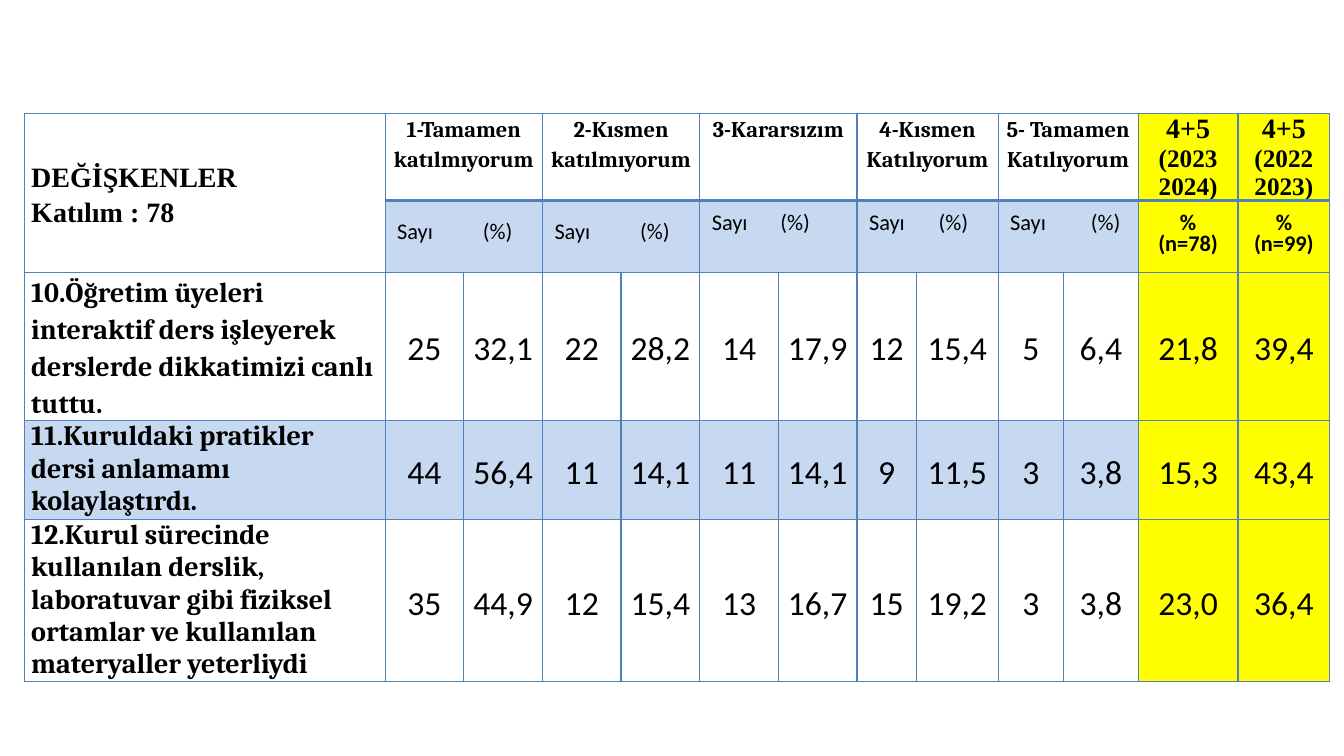
import pptx
import pptx.util
import pptx.dml.color
import pptx.enum.text
import pptx.oxml.ns
import lxml.etree

RGB = pptx.dml.color.RGBColor
ALIGN = pptx.enum.text.PP_ALIGN
ANCHOR = pptx.enum.text.MSO_ANCHOR
BLACK = RGB(0x00, 0x00, 0x00)
BLUE = RGB(0x4F, 0x81, 0xBD)
PALE = RGB(0xC6, 0xD9, 0xF1)
YELLOW = RGB(0xFF, 0xFF, 0x00)
PX = 9144

COLS = [358] + [78] * 6 + [59, 81, 65, 74, 99, 91]
ROWS = [86, 71, 147, 98, 161]
SCALE = ["1-Tamamen katılmıyorum", "2-Kısmen katılmıyorum", "3-Kararsızım",
         "4-Kısmen Katılıyorum", "5- Tamamen Katılıyorum"]
TABS = [(85, 0), (85, 0), (68, 18), (69, 18), (80, 18)]
SUMS = [("(2023 2024)", "(n=78)"), ("(2022 2023)", "(n=99)")]
ITEMS = [
    ("10.Öğretim üyeleri interaktif ders işleyerek derslerde dikkatimizi canlı tuttu.",
     "25 32,1 22 28,2 14 17,9 12 15,4 5 6,4 21,8 39,4", 1.15, None),
    ("11.Kuruldaki pratikler dersi anlamamı kolaylaştırdı.",
     "44 56,4 11 14,1 11 14,1 9 11,5 3 3,8 15,3 43,4", 1.0, PALE),
    ("12.Kurul sürecinde kullanılan derslik, laboratuvar gibi fiziksel ortamlar "
     "ve kullanılan materyaller yeterliydi",
     "35 44,9 12 15,4 13 16,7 15 19,2 3 3,8 23,0 36,4", 1.0, None),
]


def points(size):
    """Give a length in points."""
    return pptx.util.Pt(size)


def style(name, size, bold=True):
    """Give the format values of a font."""
    return {"name": name, "size": points(size), "bold": bold}


TITLE = style("Times New Roman", 20)
YEAR = style("Times New Roman", 18)
HEAD = style("Cambria", 16)
ITEM = style("Cambria", 20)
UNIT = style("Calibri", 16, False)
SHARE = style("Calibri", 16)
VALUE = style("Calibri", 24, False)


def apply(part, values):
    """Set each format value on a part."""
    for key, value in values.items():
        setattr(part, key, value)


def write(cell, lines, space=1.15, align=ALIGN.CENTER, anchor=ANCHOR.MIDDLE,
          left=7, bottom=0):
    """Write styled lines into a cell."""
    apply(cell, {"margin_left": left * PX, "margin_right": 7 * PX, "margin_top": 0,
                 "margin_bottom": bottom * PX, "vertical_anchor": anchor})
    frame = cell.text_frame
    for index, (text, font) in enumerate(lines):
        para = frame.add_paragraph() if index else frame.paragraphs[0]
        apply(para, {"alignment": align, "line_spacing": space})
        run = para.add_run()
        run.text = text
        apply(run.font, font)
        run.font.color.rgb = BLACK


def tab(cell, stop):
    """Add a tab stop to the first line of a cell."""
    name = pptx.oxml.ns.qn
    props = cell.text_frame.paragraphs[0]._p.get_or_add_pPr()
    stops = lxml.etree.SubElement(props, name("a:tabLst"))
    lxml.etree.SubElement(stops, name("a:tab"), pos=str(stop * PX), algn="l")


def paint(cell, fill, top, base):
    """Give a cell its borders and fill."""
    name = pptx.oxml.ns.qn
    props = cell._tc.get_or_add_tcPr()
    for side, width in (("L", 1), ("R", 1), ("T", top), ("B", base)):
        line = lxml.etree.SubElement(props, name("a:ln" + side), w=str(points(width)))
        solid = lxml.etree.SubElement(line, name("a:solidFill"))
        lxml.etree.SubElement(solid, name("a:srgbClr"), val=str(BLUE))
    if fill is None:
        cell.fill.background()
    else:
        cell.fill.solid()
        cell.fill.fore_color.rgb = fill


def shade(table):
    """Paint every cell of the table."""
    fills = [None, PALE] + [item[3] for item in ITEMS]
    for row, fill in enumerate(fills):
        for col in range(len(COLS)):
            tint = YELLOW if col > 10 else None if row == 1 and col == 0 else fill
            top = 2.25 if row == 1 and col else 1
            base = 2.25 if row == 0 and col else 1
            paint(table.cell(row, col), tint, top, base)


def header(table):
    """Fill the two heading rows."""
    table.cell(0, 0).merge(table.cell(1, 0))
    write(table.cell(0, 0), [("DEĞİŞKENLER", TITLE), ("Katılım : 78", TITLE)],
          align=ALIGN.LEFT)
    for index, (label, (stop, lift)) in enumerate(zip(SCALE, TABS)):
        col = 1 + 2 * index
        for row in (0, 1):
            table.cell(row, col).merge(table.cell(row, col + 1))
        write(table.cell(0, col), [(label, HEAD)], anchor=ANCHOR.TOP)
        unit = table.cell(1, col)
        write(unit, [("Sayı\t(%)", UNIT)], points(13), ALIGN.LEFT, left=12, bottom=lift)
        tab(unit, stop)
    for col, (year, count) in enumerate(SUMS, 11):
        write(table.cell(0, col), [("4+5", TITLE), (year, YEAR)], 1.0, anchor=ANCHOR.TOP)
        write(table.cell(1, col), [("%", SHARE), (count, SHARE)], points(15))


def body(table):
    """Fill the survey item rows."""
    for row, (label, values, space, fill) in enumerate(ITEMS, 2):
        write(table.cell(row, 0), [(label, ITEM)], space, ALIGN.LEFT, ANCHOR.TOP)
        for col, value in enumerate(values.split(), 1):
            write(table.cell(row, col), [(value, VALUE)])


def survey(slide, left, top):
    """Place the survey table at a corner."""
    box = [side * PX for side in (left, top, sum(COLS), sum(ROWS))]
    table = slide.shapes.add_table(len(ROWS), len(COLS), *box).table
    apply(table, {"first_row": False, "horz_banding": False})
    for col, width in zip(table.columns, COLS):
        col.width = width * PX
    for row, height in zip(table.rows, ROWS):
        row.height = height * PX
    shade(table)
    header(table)
    body(table)


def main():
    """Build and save the slide."""
    deck = pptx.Presentation()
    apply(deck, {"slide_width": 1333 * PX, "slide_height": 750 * PX})
    slide = deck.slides.add_slide(deck.slide_layouts[6])
    survey(slide, 24, 113)
    deck.save("out.pptx")


if __name__ == "__main__":
    main()
